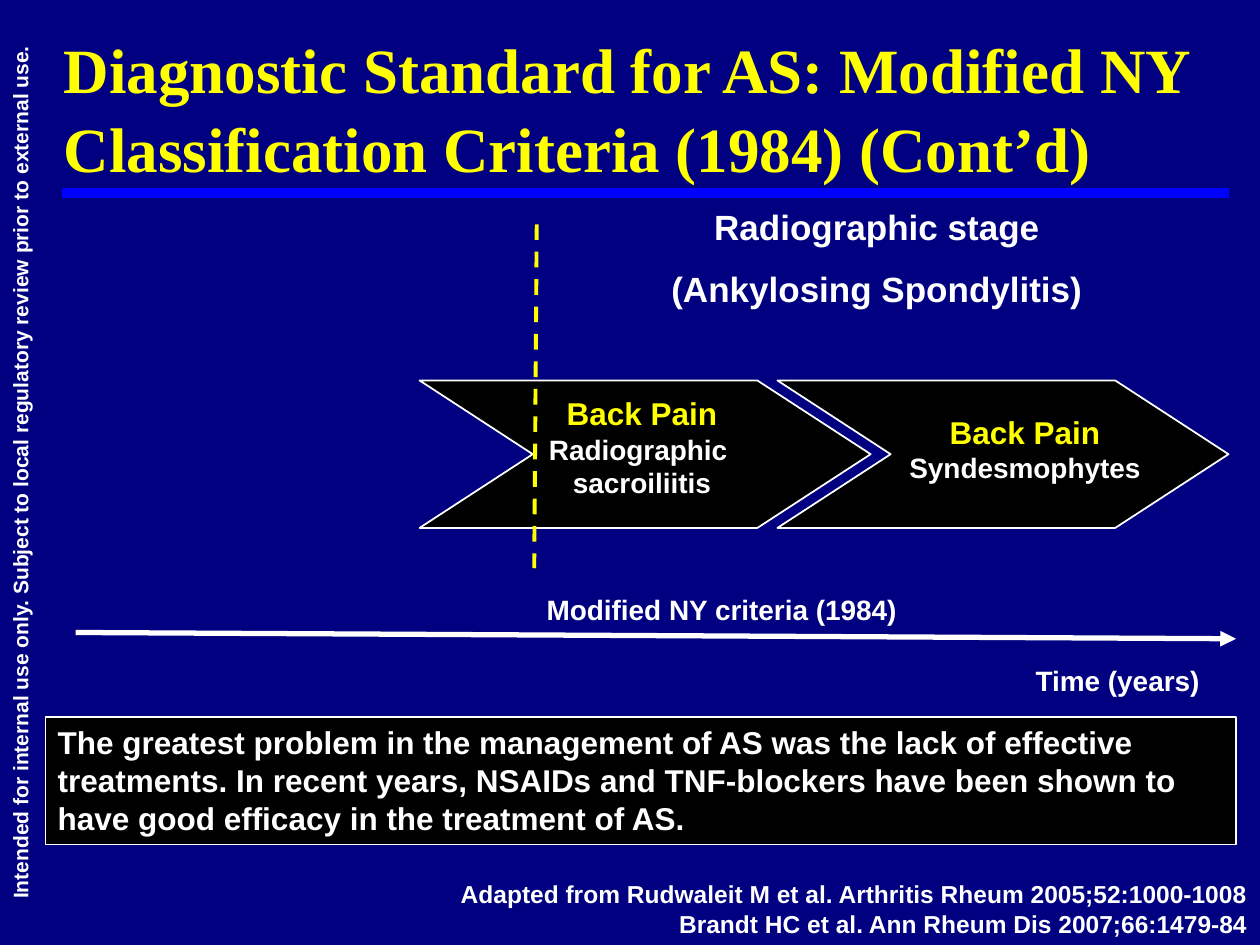
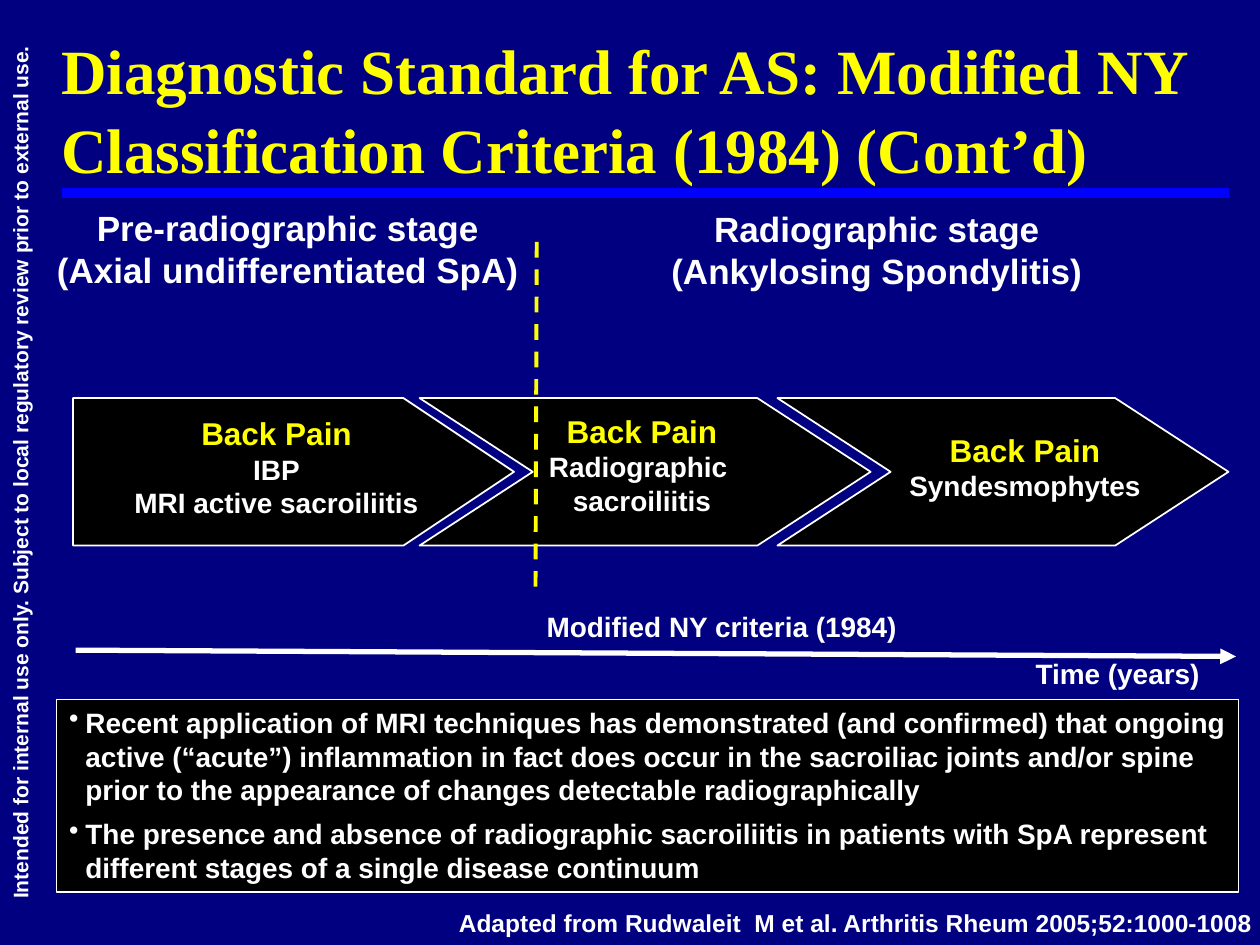
from pptx import Presentation
from pptx.dml.color import RGBColor
from pptx.enum.dml import MSO_LINE
from pptx.enum.shapes import MSO_CONNECTOR, MSO_SHAPE
from pptx.enum.text import MSO_ANCHOR, PP_ALIGN
from pptx.oxml.ns import qn
from pptx.util import Inches, Pt
from lxml.etree import SubElement

COLORS = {"navy": "000080", "blue": "0000FF", "yellow": "FFFF00",
          "white": "FFFFFF", "black": "000000"}
LEFT, CENTER, RIGHT = PP_ALIGN.LEFT, PP_ALIGN.CENTER, PP_ALIGN.RIGHT

TITLE = "Diagnostic Standard for AS: Modified NY Classification Criteria (1984) (Cont’d)"
DISCLAIMER = "Intended for internal use only. Subject to local regulatory review prior to external use."
CRITERIA = "Modified NY criteria (1984)"
TIME = "Time (years)"
RADIOGRAPHIC = ["Radiographic stage", "(Ankylosing Spondylitis)"]

EARLY_STAGE = {
    "kind": MSO_SHAPE.PENTAGON, "left": 0.58, "width": 3.5, "point": 0.75,
    "label": (0.53, 0.08, 3.33, 0.94),
    "lines": ["Back Pain", "IBP", "MRI active sacroiliitis"]}
LATE_STAGES = [
    {"kind": MSO_SHAPE.CHEVRON, "left": 3.33, "width": 3.58, "point": 0.768,
     "label": (3.72, 0.06, 2.75, 0.98),
     "lines": ["Back Pain", "Radiographic ", "sacroiliitis"]},
    {"kind": MSO_SHAPE.CHEVRON, "left": 6.17, "width": 3.58, "point": 0.768,
     "label": (6.76, 0.21, 2.75, 0.67),
     "lines": ["Back Pain", "Syndesmophytes"]},
]

SLIDES = [
    {"title_at": (0.41, 0.16, 9.53, 1.31),
     "band_top": 3.02, "stages": LATE_STAGES,
     "headings": [((5.21, 1.58, 3.5, 0.94), RADIOGRAPHIC, 11.5)],
     "divider_end": (4.24, 4.51), "time_top": 5.22,
     "note_at": (0.36, 5.69, 9.45, 1.01), "note_size": 18, "bullets": False,
     "note": ["The greatest problem in the management of AS was the lack of effective "
              "treatments. In recent years, NSAIDs and TNF-blockers have been shown to "
              "have good efficacy in the treatment of AS."],
     "source_at": (3.41, 6.93, 6.59, 0.57),
     "source": ["Adapted from Rudwaleit M et al. Arthritis Rheum 2005;52:1000-1008",
                "Brandt HC et al. Ann Rheum Dis 2007;66:1479-84"]},
    {"title_at": (0.39, 0.17, 9.43, 1.31),
     "band_top": 3.16, "stages": [EARLY_STAGE] + LATE_STAGES,
     "headings": [((5.21, 1.6, 3.5, 0.77), RADIOGRAPHIC, 0),
                  ((0.3, 1.59, 3.97, 0.77),
                   ["Pre-radiographic stage", "(Axial undifferentiated SpA)"], 0)],
     "divider_end": (4.25, 4.67), "time_top": 5.16,
     "note_at": (0.45, 5.55, 9.38, 1.53), "note_size": 16, "bullets": True,
     "note": ["Recent application of MRI techniques has demonstrated (and confirmed) that "
              "ongoing active (“acute”) inflammation in fact does occur in the sacroiliac "
              "joints and/or spine prior to the appearance of changes detectable "
              "radiographically",
              "The presence and absence of radiographic sacroiliitis in patients with SpA "
              "represent different stages of a single disease continuum"],
     "source_at": (3.51, 7.16, 6.53, 0.34),
     "source": ["Adapted from Rudwaleit  M et al. Arthritis Rheum 2005;52:1000-1008"]},
]


def color(name):
    return RGBColor.from_string(COLORS[name])


def write(tf, lines, size, align=LEFT, fill="white", font="Arial", gap=0, wrap=True):
    tf.word_wrap = wrap
    tf.text = "\n".join(lines)
    for i, p in enumerate(tf.paragraphs):
        p.alignment = align
        p.space_before = Pt(gap if i else 0)
        for r in p.runs:
            r.font.name, r.font.size, r.font.bold = font, Pt(size), True
            r.font.color.rgb = color(fill)


def add_text(s, at, lines, size, **style):
    sp = s.shapes.add_textbox(*map(Inches, at))
    write(sp.text_frame, lines, size, **style)
    return sp


def add_box(s, kind, at, weight):
    sp = s.shapes.add_shape(kind, *map(Inches, at))
    sp.shadow.inherit = False
    sp.fill.solid()
    sp.fill.fore_color.rgb = color("black")
    sp.line.color.rgb = color("white")
    sp.line.width = Pt(weight)
    return sp


def add_line(s, start, end, fill, weight):
    ln = s.shapes.add_connector(MSO_CONNECTOR.STRAIGHT, *map(Inches, start + end))
    ln.line.color.rgb = color(fill)
    ln.line.width = Pt(weight)
    SubElement(ln._element.spPr, qn("a:effectLst"))
    return ln


def add_frame(s, title_at):
    s.background.fill.solid()
    s.background.fill.fore_color.rgb = color("navy")
    add_line(s, (0.49, 1.53), (9.75, 1.53), "blue", 6)
    add_text(s, (-3.59, 3.6, 7.5, 0.3), [DISCLAIMER], 12, align=CENTER).rotation = 270
    title = add_text(s, title_at, [TITLE], 36, fill="yellow", font="Times New Roman")
    title.text_frame.paragraphs[0].line_spacing = 1.05


def add_stages(s, stages, top):
    for stage in stages:
        sp = add_box(s, stage["kind"], (stage["left"], top, stage["width"], 1.17), 1)
        sp.adjustments[0] = stage["point"]
    for stage in stages:
        x, dy, w, h = stage["label"]
        label = add_text(s, (x, top + dy, w, h), stage["lines"], 16, align=CENTER)
        r = label.text_frame.paragraphs[0].runs[0]
        r.font.size = Pt(18)
        r.font.color.rgb = color("yellow")


def add_timeline(s, top, divider_end, time_top):
    divider = add_line(s, (4.26, top - 1.24), divider_end, "yellow", 2.25)
    divider.line.dash_style = MSO_LINE.DASH
    axis = add_line(s, (0.6, top + 2), (9.81, top + 2.05), "white", 3)
    SubElement(axis.line._get_or_add_ln(), qn("a:tailEnd"), type="triangle")
    add_text(s, (4.24, top + 1.63, 3.02, 0.37), [CRITERIA], 16, wrap=False)
    add_text(s, (7.76, time_top, 1.86, 0.37), [TIME], 16, align=RIGHT)


def add_note(s, at, lines, size, bullets):
    tf = add_box(s, MSO_SHAPE.RECTANGLE, at, 0.75).text_frame
    tf.vertical_anchor = MSO_ANCHOR.TOP
    write(tf, lines, size, gap=6)
    if bullets:
        for p in tf.paragraphs:
            pPr = p._p.get_or_add_pPr()
            pPr.set("marL", str(Inches(0.13)))
            pPr.set("indent", str(Inches(-0.13)))
            SubElement(pPr, qn("a:buChar"), char="•")


def main():
    prs = Presentation()
    prs.slide_width, prs.slide_height = Inches(10), Inches(7.5)
    for d in SLIDES:
        s = prs.slides.add_slide(prs.slide_layouts[6])
        add_frame(s, d["title_at"])
        add_stages(s, d["stages"], d["band_top"])
        add_timeline(s, d["band_top"], d["divider_end"], d["time_top"])
        for at, lines, gap in d["headings"]:
            add_text(s, at, lines, 20, align=CENTER, gap=gap)
        add_note(s, d["note_at"], d["note"], d["note_size"], d["bullets"])
        add_text(s, d["source_at"], d["source"], 14, align=RIGHT, wrap=False)
    prs.save("out.pptx")


if __name__ == "__main__":
    main()
